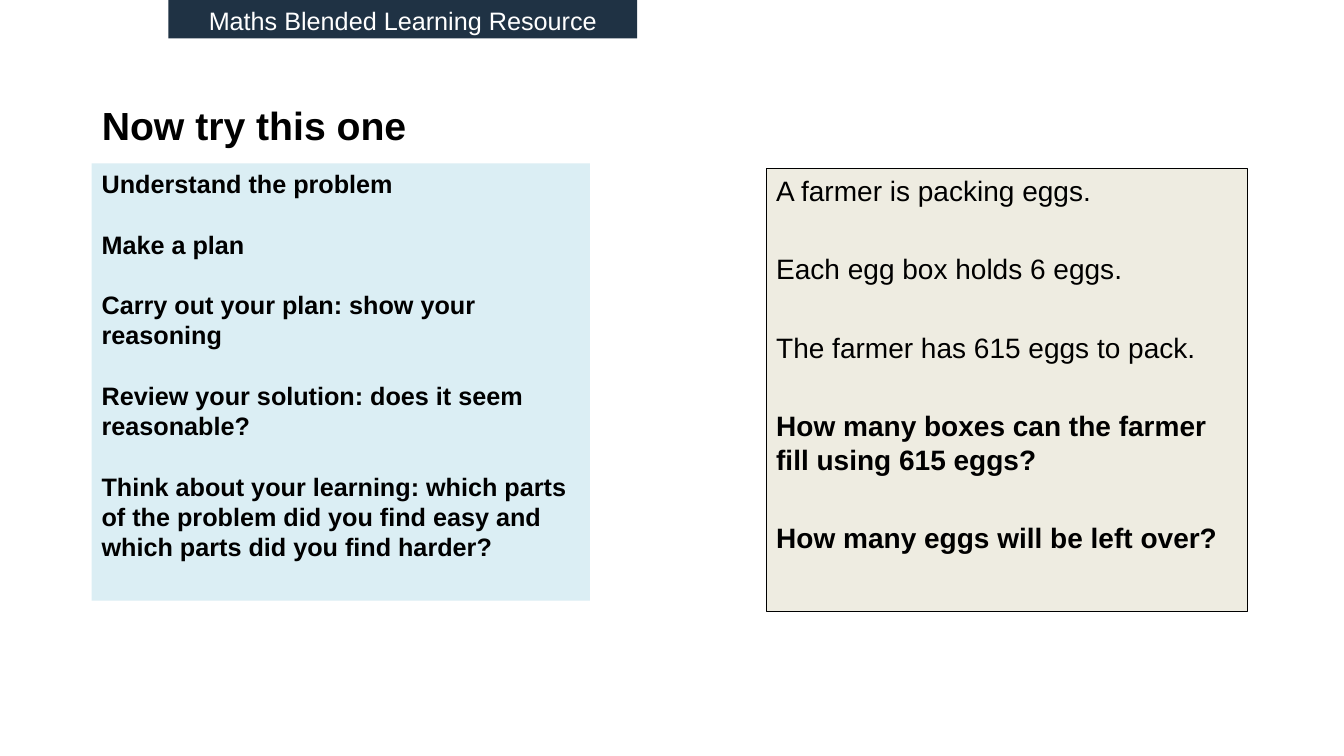
from pptx import Presentation
from pptx.dml.color import RGBColor
from pptx.enum.shapes import MSO_SHAPE
from pptx.enum.text import MSO_ANCHOR, PP_ALIGN
from pptx.util import Inches, Pt

RECTANGLE = MSO_SHAPE.RECTANGLE
TOP, MIDDLE = MSO_ANCHOR.TOP, MSO_ANCHOR.MIDDLE
LEFT, CENTER = PP_ALIGN.LEFT, PP_ALIGN.CENTER

BLACK = RGBColor(0x00, 0x00, 0x00)
WHITE = RGBColor(0xFF, 0xFF, 0xFF)
NAVY = RGBColor(0x1F, 0x32, 0x44)
PALE_BLUE = RGBColor(0xDB, 0xEE, 0xF4)
CREAM = RGBColor(0xEE, 0xEC, 0xE1)
FONT = "Arial"

STEPS = [
    "Understand the problem",
    "Make a plan",
    "Carry out your plan: show your reasoning",
    "Review your solution: does it seem reasonable?",
    "Think about your learning: which parts of the problem did you find easy "
    "and which parts did you find harder?",
]
FACTS = [
    "A farmer is packing eggs.",
    "Each egg box holds 6 eggs.",
    "The farmer has 615 eggs to pack.",
]
QUESTIONS = [
    "How many boxes can the farmer fill using 615 eggs?",
    "How many eggs will be left over?",
]


def place(shape, left, top, width, height):
    shape.left, shape.top = Inches(left), Inches(top)
    shape.width, shape.height = Inches(width), Inches(height)


def write(frame, lines, size, color=BLACK, align=LEFT, gap=0):
    """Fill a text frame with (text, bold) lines, gap points apart."""
    frame.word_wrap = True
    for index, (text, bold) in enumerate(lines):
        paragraph = frame.paragraphs[0] if index == 0 else frame.add_paragraph()
        paragraph.alignment = align
        if index:
            paragraph.space_before = Pt(gap)
        run = paragraph.add_run()
        run.text = text
        run.font.name = FONT
        run.font.size = Pt(size)
        run.font.bold = bold
        run.font.color.rgb = color


def add_panel(slide, box, fill, outline=None):
    """Add a filled rectangle and return its text frame."""
    panel = slide.shapes.add_shape(RECTANGLE, *map(Inches, box))
    panel.shadow.inherit = False
    panel.fill.solid()
    panel.fill.fore_color.rgb = fill
    if outline is None:
        panel.line.fill.background()
    else:
        panel.line.color.rgb = outline
        panel.line.width = Pt(0.75)
    panel.text_frame.vertical_anchor = TOP
    return panel.text_frame


def add_title(slide, text):
    title = slide.shapes.title
    place(title, 0.91, 0.92, 9, 0.64)
    title.text_frame.vertical_anchor = MIDDLE
    write(title.text_frame, [(text, True)], 28)


def main():
    prs = Presentation()
    prs.slide_width, prs.slide_height = Inches(13.33), Inches(7.5)
    slide = prs.slides.add_slide(prs.slide_layouts[5])

    add_title(slide, "Now try this one")

    steps = add_panel(slide, (0.91, 1.62, 4.94, 4.34), PALE_BLUE)
    write(steps, [(step, True) for step in STEPS], 18, gap=21.7)

    banner = add_panel(slide, (1.67, 0, 4.65, 0.38), NAVY)
    write(banner, [("Maths Blended Learning Resource", False)], 18, WHITE, CENTER)

    problem = add_panel(slide, (7.6, 1.67, 4.77, 4.4), CREAM, BLACK)
    lines = [(fact, False) for fact in FACTS]
    lines += [(question, True) for question in QUESTIONS]
    write(problem, lines, 20, gap=32)

    prs.save("out.pptx")


if __name__ == "__main__":
    main()
